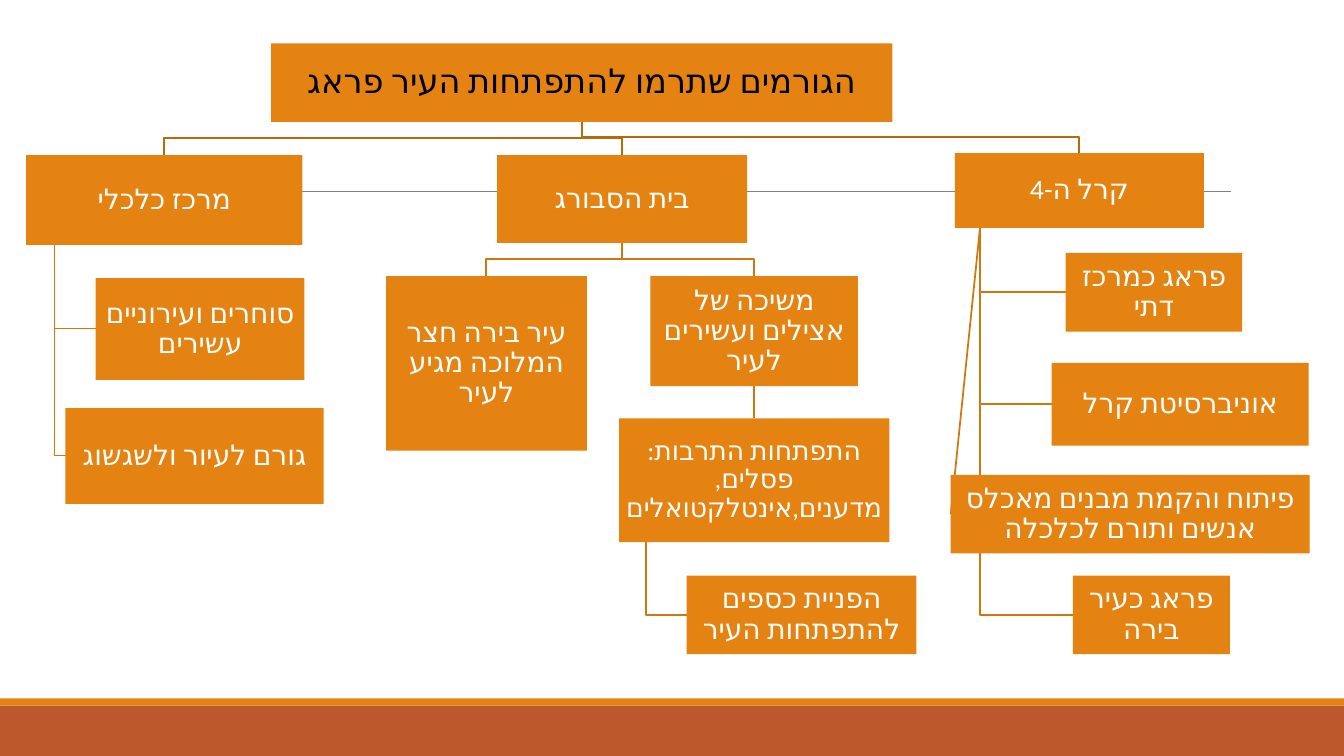
"""Build a one-slide Hebrew chart of what helped Prague grow."""
from collections import namedtuple
from dataclasses import dataclass
from math import ceil

from lxml import etree
from pptx import Presentation
from pptx.dml.color import RGBColor
from pptx.enum.shapes import MSO_CONNECTOR, MSO_SHAPE
from pptx.enum.text import MSO_ANCHOR, MSO_AUTO_SIZE, PP_ALIGN
from pptx.oxml.ns import qn
from pptx.util import Emu, Pt

PX = 9144
WIDE, HIGH = 1333, 750
RECT = MSO_SHAPE.RECTANGLE
STRAIGHT = MSO_CONNECTOR.STRAIGHT
MIDDLE = MSO_ANCHOR.MIDDLE
CENTER = PP_ALIGN.CENTER
FIXED = MSO_AUTO_SIZE.NONE

Box = namedtuple("Box", "left top width height")


@dataclass(frozen=True)
class Theme:
    """Hold the colours and type sizes."""
    font: str = "Calibri"
    fill: str = "E48312"
    base: str = "BD582C"
    rule: str = "808080"
    trunk: str = "B7690E"
    twig: str = "CF7710"
    dark: str = "000000"
    light: str = "FFFFFF"
    title: int = 24
    body: int = 20
    snug: int = 19
    thin: float = 0.5
    thick: float = 1.25


LOOK = Theme()


def px(size):
    """Turn px into EMU."""
    return Emu(round(size * PX))


def rgb(code):
    """Read a hex colour."""
    return RGBColor.from_string(code)


def shift(box, part):
    """Place a part from the corner of a box."""
    left, top, width, height = part
    return Box(box.left + left, box.top + top, width, height)


def write(shape, text, size=LOOK.body, color=LOOK.light, inset=1):
    """Set centred right-to-left text in a shape."""
    frame = shape.text_frame
    frame.word_wrap = True
    frame.auto_size = FIXED
    frame.vertical_anchor = MIDDLE
    frame.margin_left = frame.margin_right = px(inset)
    frame.margin_top = frame.margin_bottom = px(inset)
    para = frame.paragraphs[0]
    para.alignment = CENTER
    para.line_spacing = 0.9
    para._p.get_or_add_pPr().set("rtl", "1")
    run = para.add_run()
    run.text = text
    font = run.font
    font.name = LOOK.font
    font.size = Pt(size)
    font.color.rgb = rgb(color)
    props = run._r.get_or_add_rPr()
    props.set("lang", "he-IL")
    etree.SubElement(props, qn("a:cs")).set("typeface", LOOK.font)


def paint(shape, color):
    """Fill a shape and drop its outline."""
    shape.fill.solid()
    shape.fill.fore_color.rgb = rgb(color)
    shape.line.fill.background()


def block(slide, box, color=LOOK.fill):
    """Add a plain rectangle."""
    shape = slide.shapes.add_shape(RECT, *map(px, box))
    shape.shadow.inherit = False
    paint(shape, color)
    return shape


def wire(slide, points, color=LOOK.twig, weight=LOOK.thick):
    """Join points with a straight or bent line."""
    if len(points) == 2:
        ends = [px(n) for point in points for n in point]
        line = slide.shapes.add_connector(STRAIGHT, *ends)
    else:
        pen = slide.shapes.build_freeform(*points[0], scale=PX)
        pen.add_line_segments(points[1:], close=False)
        line = pen.convert_to_shape()
        line.fill.background()
        line.shadow.inherit = False
    line.line.color.rgb = rgb(color)
    line.line.width = Pt(weight)
    if len(points) == 2:
        etree.SubElement(line._element.spPr, qn("a:effectLst"))


def fork(slide, box, kids, color=LOOK.twig):
    """Drop lines from a box to the tops of its kids."""
    mid = box.left + box.width // 2
    foot = box.top + box.height
    for kid in kids:
        end = kid.left + kid.width // 2
        turn = (foot + kid.top) // 2
        bend = [] if end == mid else [(mid, turn), (end, turn)]
        wire(slide, [(mid, foot), *bend, (end, kid.top)], color)


def hang(slide, box, parts):
    """Hang kids from a spine a tenth of the way along a box."""
    spine = box.left + ceil(box.width / 10)
    foot = box.top + box.height
    kids = [(text, shift(box, part)) for text, part in parts]
    for _, kid in reversed(kids):
        mid = kid.top + kid.height // 2
        bend = [(spine, mid)] if kid.left > spine else []
        wire(slide, [(spine, foot), *bend, (kid.left, mid)])
    for text, kid in kids:
        write(block(slide, kid), text)


def trade(slide, box):
    """Draw the economic branch."""
    write(block(slide, box), "מרכז כלכלי")
    hang(slide, box, [
        ("סוחרים ועירוניים עשירים", (69, 122, 207, 101)),
        ("גורם לעיור ולשגשוג", (39, 251, 256, 95)),
    ])


def house(slide, box):
    """Draw the Habsburg branch."""
    court = shift(box, (-110, 120, 199, 173))
    draw = shift(box, (152, 120, 206, 109))
    arts = shift(draw, (-31, 141, 268, 123))
    fork(slide, box, [court, draw])
    fork(slide, draw, [arts])
    for text, spot, size in [
        ("בית הסבורג", box, LOOK.body),
        ("עיר בירה חצר המלוכה מגיע לעיר", court, LOOK.body),
        ("משיכה של אצילים ועשירים לעיר", draw, LOOK.body),
        ("התפתחות התרבות: פסלים, מדענים,אינטלקטואלים", arts, LOOK.snug),
    ]:
        write(block(slide, spot), text, size=size)
    hang(slide, arts, [("הפניית כספים להתפתחות העיר", (67, 156, 228, 78))])


def king(slide, box):
    """Draw the branch of Charles IV."""
    write(block(slide, box), "קרל ה-4")
    hang(slide, box, [
        ("פראג כמרכז דתי", (110, 99, 175, 78)),
        ("אוניברסיטת קרל", (96, 208, 255, 82)),
        ("פיתוח והקמת מבנים מאכלס אנשים ותורם לכלכלה", (-4, 319, 356, 78)),
        ("פראג כעיר בירה", (117, 419, 156, 78)),
    ])


def frame(slide, box):
    """Draw the rule and the foot bands."""
    foot = box.top + box.height
    block(slide, Box(box.left, foot - 50, box.width, 50), LOOK.base)
    block(slide, Box(box.left, foot - 57, box.width, 7))
    rule = box.top + 190
    ends = [(box.left + 131, rule), (box.left + 1221, rule)]
    wire(slide, ends, LOOK.rule, LOOK.thin)


def head(slide, box):
    """Place the title as the root box."""
    title = slide.shapes.title
    title.left, title.top, title.width, title.height = map(px, box)
    paint(title, LOOK.fill)
    write(title, "הגורמים שתרמו להתפתחות העיר פראג",
          size=LOOK.title, color=LOOK.dark, inset=2)


def main():
    """Build and save the slide."""
    deck = Presentation()
    deck.slide_width, deck.slide_height = px(WIDE), px(HIGH)
    slide = deck.slides.add_slide(deck.slide_layouts[5])
    frame(slide, Box(0, 0, WIDE, HIGH))
    root = Box(269, 43, 616, 78)
    heads = {king: Box(947, 152, 247, 74), house: Box(493, 154, 248, 87),
             trade: Box(26, 154, 274, 89)}
    head(slide, root)
    fork(slide, root, heads.values(), LOOK.trunk)
    for branch, box in heads.items():
        branch(slide, box)
    deck.save("out.pptx")


if __name__ == "__main__":
    main()
